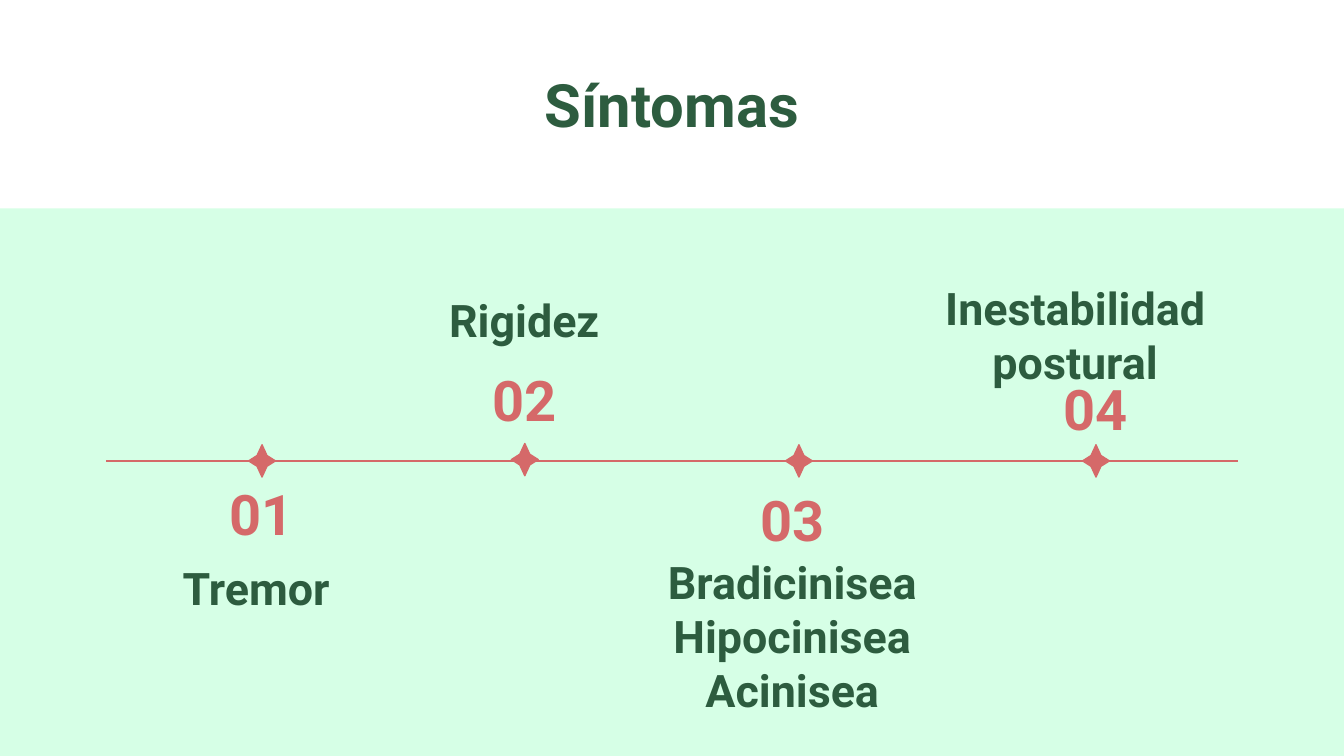
"""Build a timeline slide of four symptoms."""
from lxml import etree
from pptx import Presentation
from pptx import util as u
from pptx.dml.color import RGBColor
from pptx.enum import shapes, text
from pptx.oxml.ns import qn

WHITE = RGBColor(0xFF, 0xFF, 0xFF)
MINT = RGBColor(0xD6, 0xFF, 0xE6)
GREEN = RGBColor(0x2D, 0x5C, 0x3F)
CORAL = RGBColor(0xD5, 0x69, 0x69)

COLUMNS, ROWS = 100, 56.25
CELL = u.Inches(0.1)
AXIS_ROW = 34.3
STAR = [(0, -1.2), (0.37, -0.4), (1, 0), (0.37, 0.4),
        (0, 1.2), (-0.37, 0.4), (-1, 0), (-0.37, -0.4)]

# Number, number centre, label, label centre, label width, star centre
SYMPTOMS = [
    ("01", (19.45, 38.2), "Tremor", (19.05, 43.7), 24.2, (19.5, 34.3)),
    ("02", (39.05, 29.7), "Rigidez", (39, 23.8), 24.2, (39.05, 34.2)),
    ("03", (58.95, 38.6), "Bradicinisea\nHipocinisea\nAcinisea", (58.95, 47.3), 26.3, (59.45, 34.3)),
    ("04", (81.55, 30.4), "Inestabilidad postural", (80, 24.9), 24.2, (81.55, 34.3)),
]


def cells(count):
    return u.Emu(round(count * CELL))


def add_band(slide, rows):
    band = slide.shapes.add_shape(
        shapes.MSO_SHAPE.RECTANGLE, 0, 0, cells(COLUMNS), cells(rows))
    band.shadow.inherit = False
    band.fill.solid()
    band.fill.fore_color.rgb = WHITE
    band.line.fill.background()


def add_label(slide, wording, centre, size, points, color):
    (x, y), (width, height) = centre, size
    box = slide.shapes.add_textbox(
        cells(x - width / 2), cells(y - height / 2), cells(width), cells(height))
    frame = box.text_frame
    frame.word_wrap = True
    frame.vertical_anchor = text.MSO_ANCHOR.MIDDLE
    frame.margin_left = frame.margin_right = CELL
    frame.margin_top = frame.margin_bottom = CELL
    frame.text = wording
    for paragraph in frame.paragraphs:
        paragraph.alignment = text.PP_ALIGN.CENTER
        for run in paragraph.runs:
            run.font.name = "Roboto"
            run.font.size = u.Pt(points)
            run.font.bold = True
            run.font.color.rgb = color


def add_axis(slide, margin):
    axis = slide.shapes.add_connector(
        shapes.MSO_CONNECTOR.STRAIGHT, cells(margin), cells(AXIS_ROW),
        cells(COLUMNS - margin), cells(AXIS_ROW))
    axis.line.color.rgb = CORAL
    axis.line.width = u.Pt(0.75)
    etree.SubElement(axis.element.spPr, qn("a:effectLst"))


def add_star(slide, centre):
    x, y = centre
    points = [(cells(x + dx), cells(y + dy)) for dx, dy in STAR]
    builder = slide.shapes.build_freeform(*points[0])
    builder.add_line_segments(points[1:], close=True)
    star = builder.convert_to_shape()
    star.shadow.inherit = False
    star.fill.solid()
    star.fill.fore_color.rgb = CORAL
    star.line.color.rgb = CORAL
    star.line.width = u.Pt(0.75)


def main():
    presentation = Presentation()
    presentation.slide_width = cells(COLUMNS)
    presentation.slide_height = cells(ROWS)
    slide = presentation.slides.add_slide(presentation.slide_layouts[6])
    slide.background.fill.solid()
    slide.background.fill.fore_color.rgb = MINT

    add_band(slide, 15.5)
    add_label(slide, "Síntomas", (COLUMNS / 2, 7.75), (49.8, 6.3), 32, GREEN)
    add_axis(slide, 7.9)
    for number, number_centre, name, name_centre, width, star_centre in SYMPTOMS:
        add_label(slide, number, number_centre, (11.7, 4.2), 30, CORAL)
        add_label(slide, name, name_centre, (width, 4), 24, GREEN)
        add_star(slide, star_centre)
    presentation.save("out.pptx")


if __name__ == "__main__":
    main()
